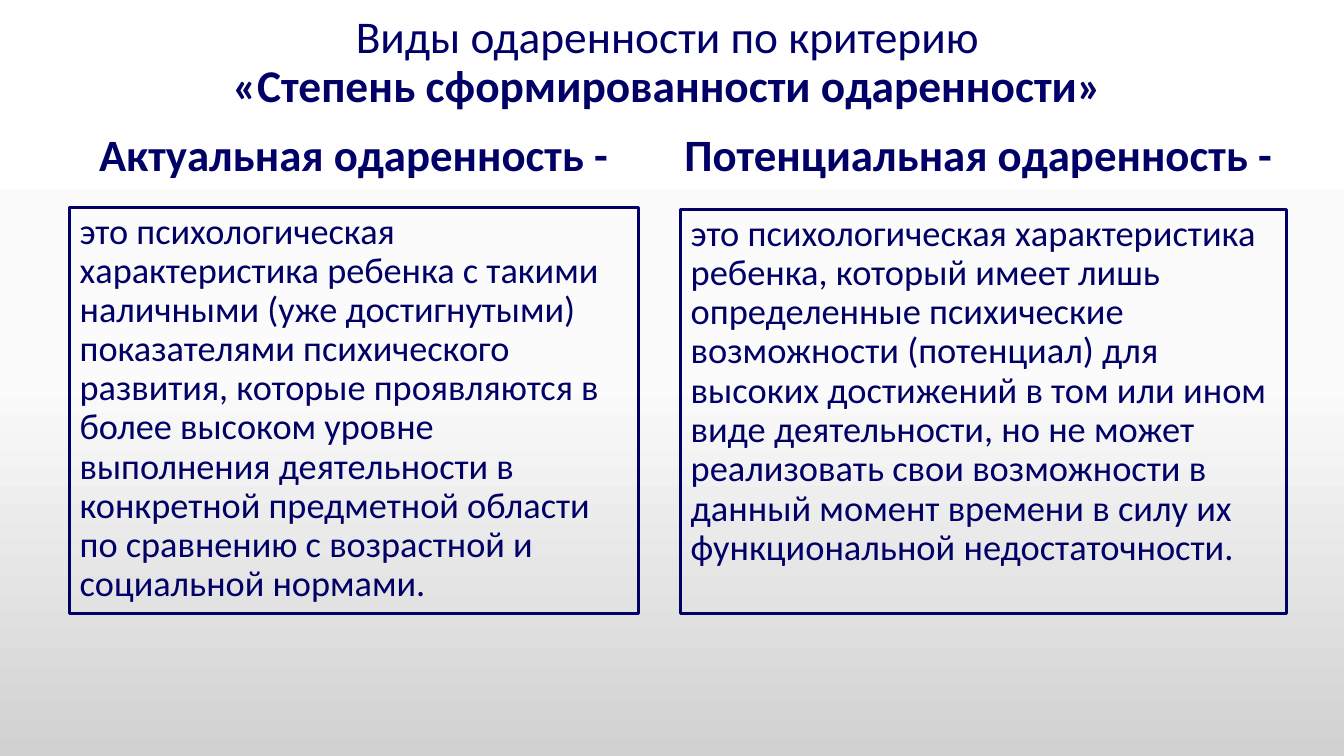
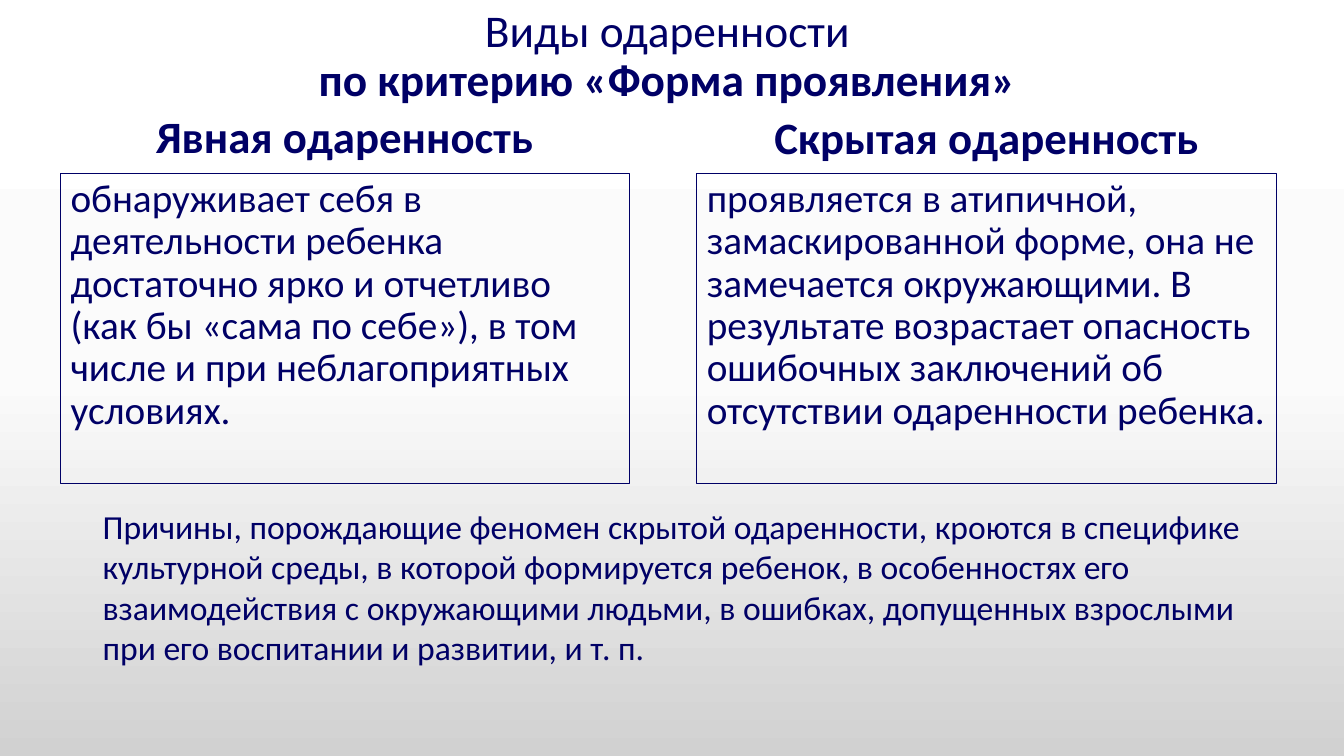
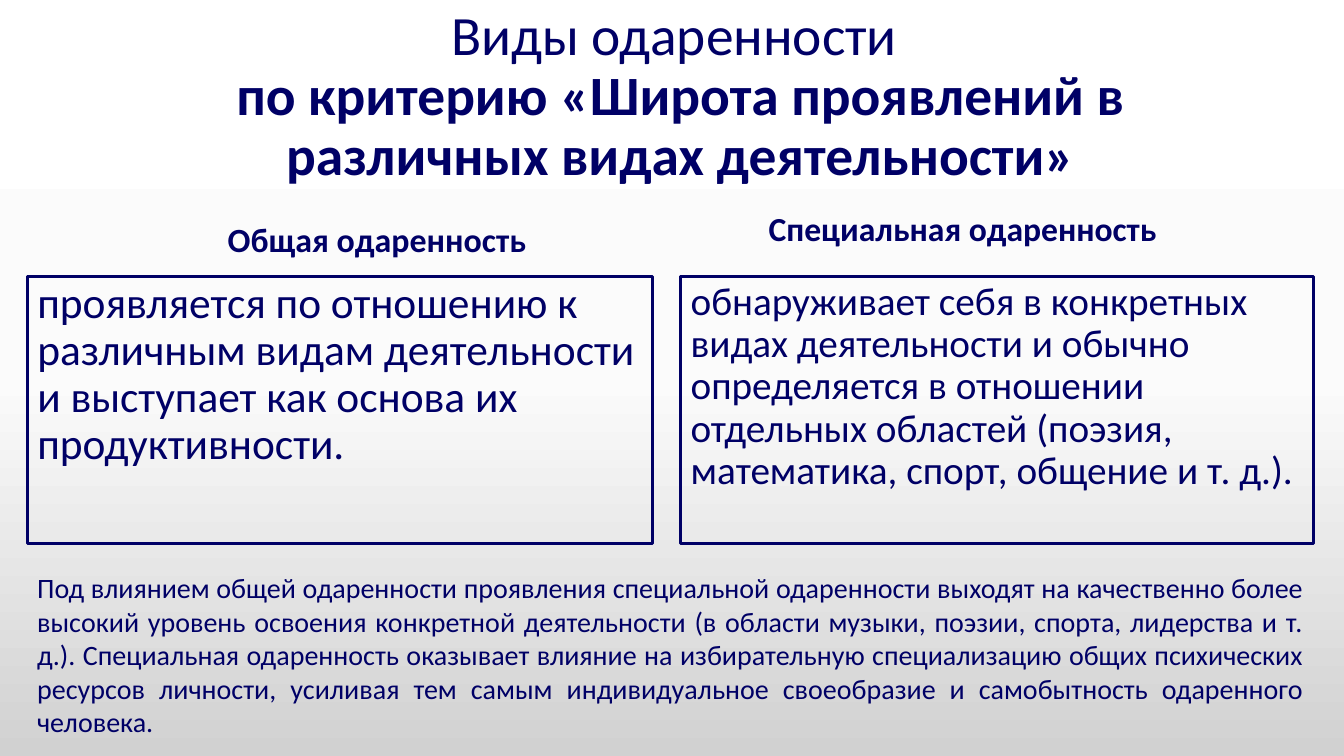
from lxml.etree import SubElement
from pptx import Presentation
from pptx.dml.color import RGBColor
from pptx.enum.text import MSO_ANCHOR as Anchor, MSO_AUTO_SIZE as AutoSize, PP_ALIGN as Align
from pptx.oxml.ns import qn
from pptx.util import Emu, Pt

EMU_PER_PX = 9144  # 100 px to the inch
NAVY = "000066"
BACKDROP = [(0, "FFFFFF"), (50, "FBFBFB"), (100, "D1D1D1")]
FONT = "Calibri"
COMPARISON_LAYOUT = 4


def px(length):
    return Emu(length * EMU_PER_PX)


def color(hex_code):
    return RGBColor.from_string(hex_code)


class Deck:
    def __init__(self, width, height):
        self.prs = Presentation()
        self.prs.slide_width, self.prs.slide_height = px(width), px(height)
        self.slide = None
        self.paint_backdrop()

    def paint_backdrop(self):
        """Vertical gradient on the master, shared by all slides."""
        master = self.prs.slide_master
        fill = master.background.fill
        fill.gradient()
        fill.gradient_angle = 270
        stops = master.element.find(".//" + qn("p:bg")).find(".//" + qn("a:gsLst"))
        for stop in list(stops):
            stops.remove(stop)
        for percent, shade in BACKDROP:
            stop = SubElement(stops, qn("a:gs"), pos=str(percent * 1000))
            SubElement(stop, qn("a:srgbClr"), val=shade)

    def new_slide(self):
        layout = self.prs.slide_layouts[COMPARISON_LAYOUT]
        self.slide = self.prs.slides.add_slide(layout)

    def place(self, index, box, anchor):
        """Move a template placeholder and prepare its text frame."""
        holder = self.slide.placeholders[index]
        holder.left, holder.top, holder.width, holder.height = map(px, box)
        frame = holder.text_frame
        frame.auto_size = AutoSize.NONE
        frame.word_wrap = True
        frame.vertical_anchor = anchor
        return holder

    def run(self, paragraph, text, size, bold=False):
        run = paragraph.add_run()
        run.text = text
        run.font.name, run.font.size, run.font.bold = FONT, Pt(size), bold
        run.font.color.rgb = color(NAVY)

    def flush_paragraph(self, holder, align):
        """First paragraph of a body placeholder, without bullet or indent."""
        paragraph = holder.text_frame.paragraphs[0]
        paragraph.alignment = align
        paragraph.line_spacing = 0.9
        paragraph.space_before = Pt(10)
        properties = paragraph._p.get_or_add_pPr()
        properties.set("marL", "0")
        properties.set("indent", "0")
        SubElement(properties, qn("a:buNone"))
        return paragraph

    def title(self, box, lead, criterion, size):
        holder = self.place(0, box, Anchor.MIDDLE)
        paragraph = holder.text_frame.paragraphs[0]
        paragraph.alignment = Align.CENTER
        paragraph.line_spacing = 0.9
        self.run(paragraph, lead, size)
        paragraph.add_line_break()
        self.run(paragraph, criterion, size, bold=True)

    def heading(self, index, box, text, size=32, bottom_inset=5):
        holder = self.place(index, box, Anchor.BOTTOM)
        holder.text_frame.margin_bottom = px(bottom_inset)
        self.run(self.flush_paragraph(holder, Align.CENTER), text, size, bold=True)

    def definition(self, index, box, text, size, border=2.25):
        holder = self.place(index, box, Anchor.TOP)
        holder.line.color.rgb = color(NAVY)
        holder.line.width = Pt(border)
        self.run(self.flush_paragraph(holder, Align.LEFT), text, size)

    def note(self, box, text, size, align=Align.LEFT):
        frame = self.slide.shapes.add_textbox(*map(px, box)).text_frame
        frame.word_wrap = True
        frame.auto_size = AutoSize.SHAPE_TO_FIT_TEXT
        frame.paragraphs[0].alignment = align
        self.run(frame.paragraphs[0], text, size)


def main():
    deck = Deck(1333, 750)

    # Degree of development
    deck.new_slide()
    deck.title((92, 11, 1150, 103), "Виды одаренности по критерию ",
               "«Степень сформированности одаренности» ", 32.4)
    deck.heading(1, (69, 142, 564, 43), "Актуальная одаренность -")
    deck.definition(
        2, (69, 206, 564, 403),
        "это психологическая характеристика ребенка с такими наличными (уже достигнутыми) "
        "показателями психического развития, которые проявляются в более высоком уровне "
        "выполнения деятельности в конкретной предметной области по сравнению с возрастной "
        "и социальной нормами.", 25.9)
    deck.heading(3, (666, 142, 609, 43), "Потенциальная одаренность -")
    deck.definition(
        4, (675, 208, 601, 401),
        "это психологическая характеристика ребенка, который имеет лишь определенные "
        "психические возможности (потенциал) для высоких достижений в том или ином виде "
        "деятельности, но не может реализовать свои возможности в данный момент времени "
        "в силу их функциональной недостаточности.", 26)

    # Form of manifestation
    deck.new_slide()
    deck.title((92, 17, 1150, 80), "Виды одаренности ",
               "по критерию «Форма проявления» ", 32.4)
    deck.heading(1, (60, 127, 564, 40), "Явная одаренность")
    deck.definition(
        2, (60, 172, 564, 308),
        "обнаруживает себя в деятельности ребенка достаточно ярко и отчетливо (как бы "
        "«сама по себе»), в том числе и при неблагоприятных условиях.", 28, border=0.75)
    deck.heading(3, (695, 123, 567, 45), "Скрытая одаренность")
    deck.definition(
        4, (691, 172, 575, 308),
        "проявляется в атипичной, замаскированной форме, она не замечается окружающими. "
        "В результате возрастает опасность ошибочных заключений об отсутствии одаренности "
        "ребенка.", 28, border=0.75)
    deck.note(
        (92, 497, 1150, 172),
        "Причины, порождающие феномен скрытой одаренности, кроются в специфике культурной "
        "среды, в которой формируется ребенок, в особенностях его взаимодействия с "
        "окружающими людьми, в ошибках, допущенных взрослыми при его воспитании и "
        "развитии, и т. п.", 24)

    # Breadth of manifestation
    deck.new_slide()
    deck.title((100, 11, 1150, 172), "Виды одаренности ",
               "по критерию «Широта проявлений в различных видах деятельности»", 39.6)
    deck.heading(1, (92, 200, 564, 74), "Общая одаренность", 24.2, bottom_inset=16)
    deck.definition(
        2, (27, 274, 620, 265),
        "проявляется по отношению к различным видам деятельности и выступает как основа "
        "их продуктивности.", 31)
    deck.heading(3, (675, 184, 567, 68), "Специальная одаренность ", 24)
    deck.definition(
        4, (675, 274, 628, 265),
        "обнаруживает себя в конкретных видах деятельности и обычно определяется в "
        "отношении отдельных областей (поэзия, математика, спорт, общение и т. д.).", 28)
    deck.note(
        (27, 561, 1276, 178),
        "Под влиянием общей одаренности проявления специальной одаренности выходят на "
        "качественно более высокий уровень освоения конкретной деятельности (в области "
        "музыки, поэзии, спорта, лидерства и т. д.). Специальная одаренность оказывает "
        "влияние на избирательную специализацию общих психических ресурсов личности, "
        "усиливая тем самым индивидуальное своеобразие и самобытность одаренного "
        "человека.", 20, Align.JUSTIFY)

    deck.prs.save("out.pptx")


if __name__ == "__main__":
    main()
